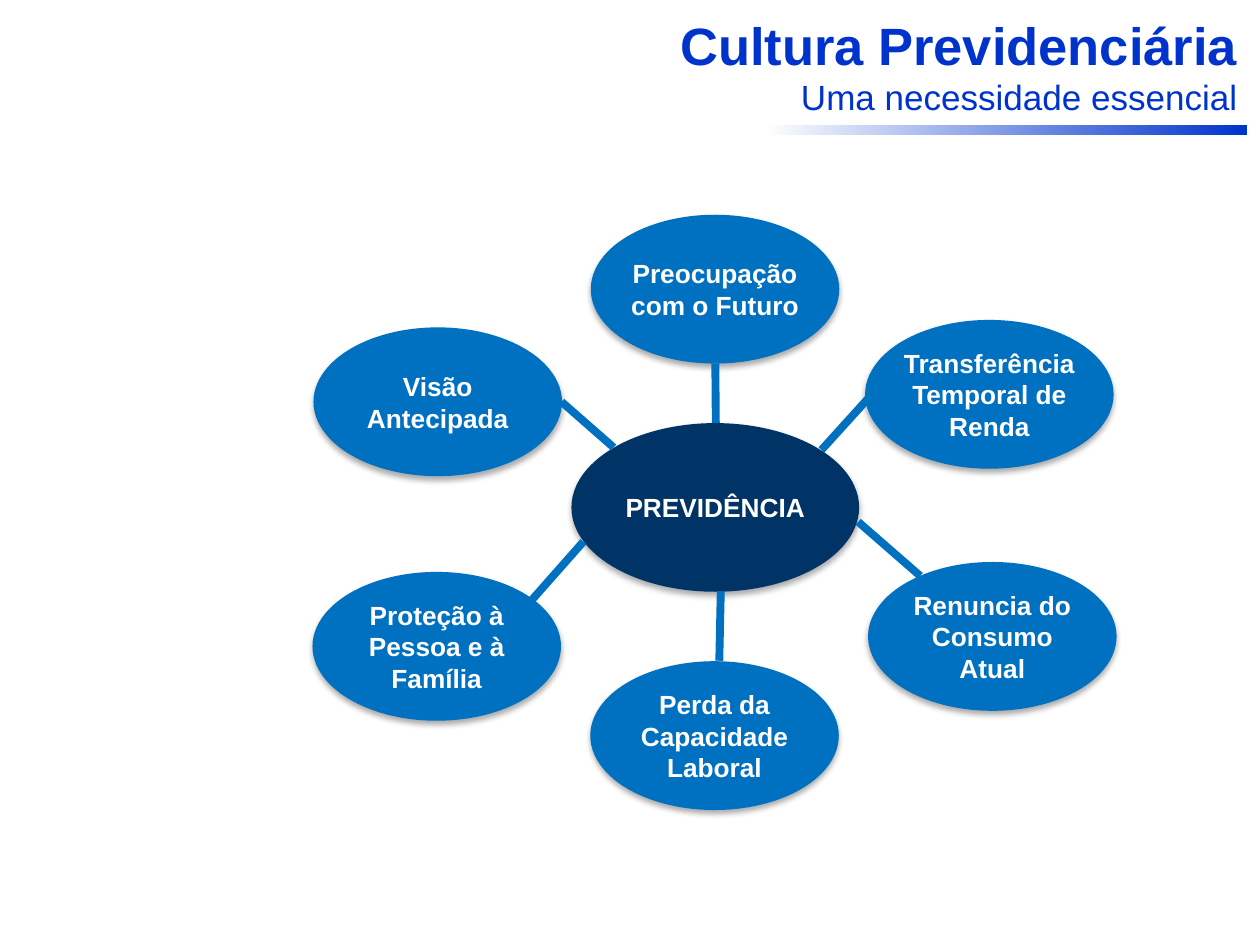
import pptx
import pptx.dml.color
import pptx.enum.shapes
import pptx.enum.text
import pptx.oxml
import pptx.util
from pptx.util import Cm

BLUE, NAVY, ROYAL, WHITE = "0070C0", "003366", "0033CC", "FFFFFF"
NS = 'xmlns:a="http://schemas.openxmlformats.org/drawingml/2006/main"'
SHADOW = (
    f'<a:outerShdw {NS} blurRad="44450" dist="27940" dir="5400000" rotWithShape="0">'
    '<a:srgbClr val="000000"><a:alpha val="32000"/></a:srgbClr></a:outerShdw>'
)
SHAPE = pptx.enum.shapes.MSO_SHAPE
ALIGN = pptx.enum.text.PP_ALIGN


def rgb(value):
    return pptx.dml.color.RGBColor.from_string(value)


def write(paragraph, text, size=15, color=WHITE, bold=True, align=ALIGN.CENTER):
    paragraph.alignment = align
    run = paragraph.add_run()
    run.text = text
    run.font.name = "Arial"
    run.font.size = pptx.util.Pt(size)
    run.font.bold = bold
    run.font.color.rgb = rgb(color)


presentation = pptx.Presentation()
presentation.slide_width, presentation.slide_height = Cm(25.4), Cm(19.05)
slide = presentation.slides.add_slide(presentation.slide_layouts[6])

# Gradient rule under the heading
rule = slide.shapes.add_shape(SHAPE.RECTANGLE, Cm(15.4), Cm(2.52), Cm(9.75), Cm(0.2))
rule.shadow.inherit = False
rule.line.fill.background()
rule.fill.gradient()
rule.fill.gradient_angle = 0
for stop, color, position in zip(rule.fill.gradient_stops, (WHITE, ROYAL), (0, 1)):
    stop.color.rgb = rgb(color)
    stop.position = position

# Central idea and the six ideas around it: text, left, top, width, height, fill
idea_size = (5.01, 3, BLUE)
ideas = [
    ("Transferência Temporal de Renda", 17.44, 6.45, *idea_size),
    ("Visão Antecipada", 6.32, 6.6, *idea_size),
    ("Perda da Capacidade Laboral", 11.9, 13.33, *idea_size),
    ("Proteção à Pessoa e à Família", 6.3, 11.53, *idea_size),
    ("Preocupação com o Futuro", 11.91, 4.33, *idea_size),
    ("PREVIDÊNCIA", 11.52, 8.53, 5.8, 3.4, NAVY),
    ("Renuncia do Consumo Atual", 17.5, 11.33, *idea_size),
]
for text, left, top, width, height, color in ideas:
    idea = slide.shapes.add_shape(SHAPE.OVAL, Cm(left), Cm(top), Cm(width), Cm(height))
    idea.shadow.inherit = False
    idea._element.spPr.find(pptx.oxml.ns.qn("a:effectLst")).append(
        pptx.oxml.parse_xml(SHADOW))
    idea.fill.solid()
    idea.fill.fore_color.rgb = rgb(color)
    idea.line.fill.background()
    frame = idea.text_frame
    frame.word_wrap = True
    frame.vertical_anchor = pptx.enum.text.MSO_ANCHOR.MIDDLE
    frame.margin_left = frame.margin_right = frame.margin_top = frame.margin_bottom = 0
    write(frame.paragraphs[0], text)

# Spokes from the central idea outwards
spokes = [
    (12.37, 9.02, 11.32, 8.1),
    (14.43, 8.53, 14.42, 7.33),
    (16.56, 9.07, 17.53, 8),
    (11.76, 10.92, 10.7, 12.12),
    (17.3, 10.52, 18.55, 11.61),
    (14.53, 11.92, 14.5, 13.32),
]
for ends in spokes:
    spoke = slide.shapes.add_connector(
        pptx.enum.shapes.MSO_CONNECTOR.STRAIGHT, *(Cm(value) for value in ends))
    spoke.line.color.rgb = rgb(BLUE)
    spoke.line.width = pptx.util.Pt(4.5)
    spoke._element.spPr.append(pptx.oxml.parse_xml(f"<a:effectLst {NS}/>"))

# Heading
heading = slide.shapes.add_textbox(Cm(4.9), Cm(0.13), Cm(20.3), Cm(2.39)).text_frame
heading.word_wrap = True
write(heading.paragraphs[0], "Cultura Previdenciária",
      size=30, color=ROYAL, align=ALIGN.RIGHT)
write(heading.add_paragraph(), "Uma necessidade essencial",
      size=20, color=ROYAL, bold=False, align=ALIGN.RIGHT)

presentation.save("out.pptx")
